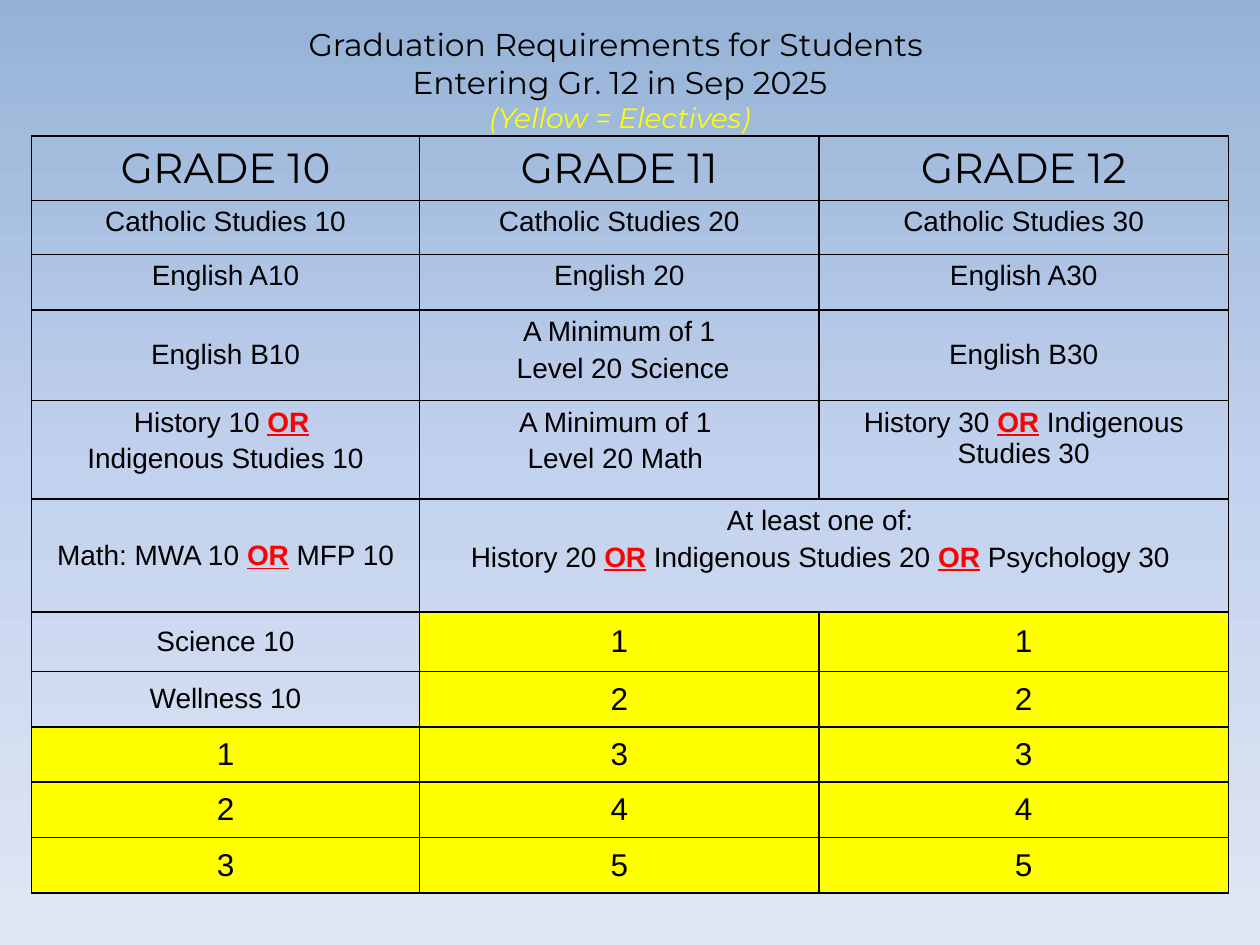
from dataclasses import dataclass

from pptx import Presentation
from pptx.dml.color import RGBColor
from pptx.enum.text import MSO_ANCHOR, PP_ALIGN
from pptx.oxml import parse_xml
from pptx.oxml.ns import nsdecls
from pptx.util import Inches, Pt

TOP, MIDDLE = MSO_ANCHOR.TOP, MSO_ANCHOR.MIDDLE
CENTER = PP_ALIGN.CENTER
BLACK, RED, YELLOW = "000000", "FF0000", "FFFF00"
BACKGROUND_STOPS = [(0, "95B3D7"), (50, "C2D1ED"), (100, "E1E8F5")]

COLUMN_WIDTHS = [3.08, 3.17, 3.25]
ROW_HEIGHTS = [0.51, 0.43, 0.44, 0.72, 0.78, 0.9, 0.47] + [0.44] * 4


@dataclass
class Entry:
    """A table cell; one string per paragraph, *stars* mark red words."""
    lines: list[str]
    size: int = 16
    font: str = "Arial"
    anchor: MSO_ANCHOR = TOP
    fill: str | None = None
    columns: int = 1


def heading(text: str) -> Entry:
    return Entry([text], size=24, font="Montserrat")


def course(*lines: str, columns: int = 1) -> Entry:
    return Entry(list(lines), columns=columns)


def centred(text: str) -> Entry:
    return Entry([text], anchor=MIDDLE)


def elective(number: int) -> Entry:
    return Entry([str(number)], size=18, anchor=MIDDLE, fill=YELLOW)


ROWS = [
    [heading(f"GRADE {grade}") for grade in (10, 11, 12)],
    [course(f"Catholic Studies {level}") for level in (10, 20, 30)],
    [course("English A10"), course("English 20"), course("English A30")],
    [centred("English B10"),
     course("A Minimum of 1", " Level 20 Science"),
     centred("English B30")],
    [course("History 10 *OR* ", "Indigenous Studies 10"),
     course("A Minimum of 1 ", "Level 20 Math "),
     course("History 30 *OR* Indigenous Studies 30")],
    [centred("Math: MWA 10 *OR* MFP 10"),
     course("At least one of: ",
            "History 20 *OR* Indigenous Studies 20 *OR* Psychology 30 ",
            columns=2)],
    [centred("Science 10"), elective(1), elective(1)],
    [centred("Wellness 10"), elective(2), elective(2)],
    *[[elective(n), elective(n + 2), elective(n + 2)] for n in (1, 2, 3)],
]


def rgb(value: str) -> RGBColor:
    return RGBColor.from_string(value)


def set_background(page) -> None:
    stops = "".join(
        f'<a:gs pos="{percent * 1000}"><a:srgbClr val="{color}"/></a:gs>'
        for percent, color in BACKGROUND_STOPS)
    page._element.cSld.insert(0, parse_xml(
        f'<p:bg {nsdecls("p", "a")}><p:bgPr><a:gradFill rotWithShape="1">'
        f'<a:gsLst>{stops}</a:gsLst><a:lin ang="5400000" scaled="0"/>'
        '</a:gradFill><a:effectLst/></p:bgPr></p:bg>'))


def style_paragraph(para, font: str, size: int) -> None:
    para.alignment = CENTER
    para.font.name = font
    para.font.size = Pt(size)
    para.font.color.rgb = rgb(BLACK)


def add_title(page) -> None:
    title = page.shapes.title
    title.left, title.top = Inches(0.67), Inches(0.09)
    title.width, title.height = Inches(8.5), Inches(1.08)
    title.text_frame.vertical_anchor = MIDDLE
    title.text_frame.word_wrap = True
    para = title.text_frame.paragraphs[0]
    style_paragraph(para, "Montserrat", 18)
    for line in ("Graduation Requirements for Students ",
                 "Entering Gr. 12 in Sep 2025"):
        para.add_run().text = line
        para.add_line_break()
    note = para.add_run()
    note.text = "(Yellow = Electives)"
    note.font.size = Pt(16)
    note.font.italic = True
    note.font.color.rgb = rgb(YELLOW)


def add_borders(cell) -> None:
    properties = cell._tc.get_or_add_tcPr()
    for index, side in enumerate(("lnL", "lnR", "lnT", "lnB")):
        properties.insert(index, parse_xml(
            f'<a:{side} {nsdecls("a")} w="{Pt(1)}"><a:solidFill>'
            f'<a:srgbClr val="{BLACK}"/></a:solidFill></a:{side}>'))


def fill_cell(cell, entry: Entry) -> None:
    cell.vertical_anchor = entry.anchor
    if entry.fill:
        cell.fill.solid()
        cell.fill.fore_color.rgb = rgb(entry.fill)
    frame = cell.text_frame
    for index, line in enumerate(entry.lines):
        para = frame.add_paragraph() if index else frame.paragraphs[0]
        style_paragraph(para, entry.font, entry.size)
        para.space_before = Pt(entry.size * 0.2)
        for part, text in enumerate(line.split("*")):
            span = para.add_run()
            span.text = text
            if part % 2:
                span.font.bold = True
                span.font.underline = True
                span.font.color.rgb = rgb(RED)


def add_requirements(page) -> None:
    table = page.shapes.add_table(
        len(ROW_HEIGHTS), len(COLUMN_WIDTHS), Inches(0.25), Inches(1.08),
        Inches(sum(COLUMN_WIDTHS)), Inches(sum(ROW_HEIGHTS))).table
    table.first_row = table.horz_banding = False
    for column, width in zip(table.columns, COLUMN_WIDTHS):
        column.width = Inches(width)
    for row, height in zip(table.rows, ROW_HEIGHTS):
        row.height = Inches(height)
    for cell in table.iter_cells():
        cell.fill.background()
        add_borders(cell)
    for row, entries in enumerate(ROWS):
        for column, entry in enumerate(entries):
            cell = table.cell(row, column)
            if entry.columns > 1:
                cell.merge(table.cell(row, column + entry.columns - 1))
            fill_cell(cell, entry)


def main() -> None:
    deck = Presentation()
    deck.slide_width, deck.slide_height = Inches(10), Inches(7.5)
    # Title-only layout
    page = deck.slides.add_slide(deck.slide_layouts[5])
    set_background(page)
    add_title(page)
    add_requirements(page)
    deck.save("out.pptx")


if __name__ == "__main__":
    main()
